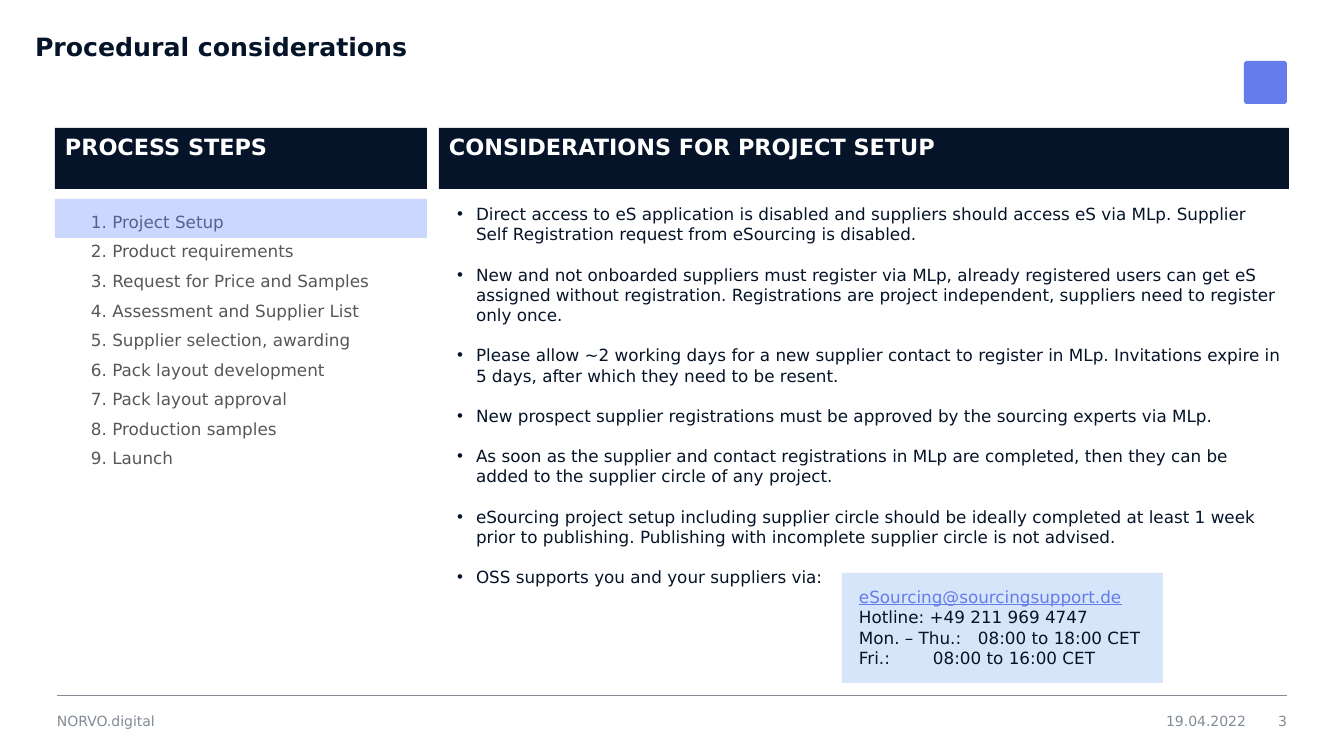
from lxml import etree
from pptx import Presentation
from pptx.dml.color import RGBColor
from pptx.enum.shapes import MSO_CONNECTOR, MSO_SHAPE
from pptx.enum.text import MSO_ANCHOR, MSO_AUTO_SIZE, PP_ALIGN
from pptx.oxml.ns import qn
from pptx.util import Emu, Pt

RECT = MSO_SHAPE.RECTANGLE
ROUND = MSO_SHAPE.ROUNDED_RECTANGLE
LINE = MSO_CONNECTOR.STRAIGHT
TOP = MSO_ANCHOR.TOP
FIXED = MSO_AUTO_SIZE.NONE
LEFT, RIGHT = PP_ALIGN.LEFT, PP_ALIGN.RIGHT

NAVY, BLUE, GREY = "051428", "647DEB", "838B95"
SCALE = 914400 / 100.8

STEPS = [
    "Project Setup",
    "Product requirements",
    "Request for Price and Samples",
    "Assessment and Supplier List",
    "Supplier selection, awarding",
    "Pack layout development",
    "Pack layout approval",
    "Production samples",
    "Launch",
]
POINTS = [
    "Direct access to eS application is disabled and suppliers should access eS via MLp. Supplier Self Registration request from eSourcing is disabled.",
    "New and not onboarded suppliers must register via MLp, already registered users can get eS assigned without registration. Registrations are project independent, suppliers need to register only once.",
    "Please allow ~2 working days for a new supplier contact to register in MLp. Invitations expire in 5 days, after which they need to be resent.",
    "New prospect supplier registrations must be approved by the sourcing experts via MLp.",
    "As soon as the supplier and contact registrations in MLp are completed, then they can be added to the supplier circle of any project.",
    "eSourcing project setup including supplier circle should be ideally completed at least 1 week prior to publishing. Publishing with incomplete supplier circle is not advised.",
    "OSS supports you and your suppliers via:",
]
CONTACTS = [
    ("eSourcing@sourcingsupport.de", 0),
    ("Hotline: +49 211 969 4747", 0),
    ("Mon. – Thu.:\t08:00 to 18:00 CET", 119),
    ("Fri.:\t08:00 to 16:00 CET", 74),
]


def px(num):
    return Emu(round(num * SCALE))


def tint(code):
    return RGBColor.from_string(code)


def apply(item, values):
    for name, value in values.items():
        setattr(item, name, value)


class Page:
    font = "DejaVu Sans"

    def __init__(self, slide):
        self.slide = slide

    def fill_text(self, frame, lines, size=12, color=NAVY, bold=False, pad=(0, 0), **form):
        across, down = pad
        apply(frame, {"margin_left": px(across), "margin_right": px(across),
                      "margin_top": px(down), "margin_bottom": px(down)})
        look = {"alignment": LEFT, "space_before": Pt(0), "space_after": Pt(0)}
        look.update(form)
        for i, line in enumerate(lines):
            para = frame.add_paragraph() if i else frame.paragraphs[0]
            apply(para, look)
            run = para.add_run()
            run.text = line
            apply(run.font, {"name": self.font, "size": Pt(size), "bold": bold})
            run.font.color.rgb = tint(color)

    def setup(self, frame):
        apply(frame, {"word_wrap": True, "auto_size": FIXED, "vertical_anchor": TOP})
        return frame

    def holder(self, idx, box, lines, **form):
        shape = self.slide.placeholders[idx]
        apply(shape, dict(zip(("left", "top", "width", "height"), map(px, box))))
        self.fill_text(self.setup(shape.text_frame), lines, **form)
        return shape.text_frame

    def label(self, box, text, **form):
        shape = self.slide.shapes.add_textbox(*map(px, box))
        self.fill_text(self.setup(shape.text_frame), [text], **form)

    def block(self, box, fill, lines=(), kind=RECT, alpha=100, **form):
        shape = self.slide.shapes.add_shape(kind, *map(px, box))
        shape.shadow.inherit = False
        shape.fill.solid()
        shape.fill.fore_color.rgb = tint(fill)
        shape.line.fill.background()
        if alpha < 100:
            color = shape._element.spPr.find(".//" + qn("a:srgbClr"))
            etree.SubElement(color, qn("a:alpha"), val=str(alpha * 1000))
        if lines:
            self.fill_text(self.setup(shape.text_frame), lines, **form)
        return shape

    def rule(self, left, right, y, color):
        line = self.slide.shapes.add_connector(LINE, px(left), px(y), px(right), px(y))
        line.line.color.rgb = tint(color)
        line.line.width = Pt(0.5)
        etree.SubElement(line._element.spPr, qn("a:effectLst"))

    def table(self, box, lines, **form):
        grid = self.slide.shapes.add_table(1, 1, *map(px, box)).table
        apply(grid, {"first_row": False, "horz_banding": False})
        cell = grid.cell(0, 0)
        cell.fill.background()
        self.fill_text(cell.text_frame, lines, **form)
        apply(cell, {"margin_left": px(32), "margin_right": px(32),
                     "margin_top": px(5), "margin_bottom": px(5)})


def main():
    deck = Presentation()
    apply(deck, {"slide_width": px(1344), "slide_height": px(756)})
    page = Page(deck.slides.add_slide(deck.slide_layouts[1]))

    page.holder(0, (35, 35, 1254, 27), ["Procedural considerations"],
                size=18, bold=True, line_spacing=0.9)
    body = page.holder(1, (447, 199, 845, 499), POINTS, pad=(10, 5),
                       line_spacing=Pt(14.4), space_after=Pt(14.4))
    for para in body.paragraphs:
        props = para._p.get_or_add_pPr()
        props.set("marL", str(px(19)))
        props.set("indent", str(px(-19)))

    page.rule(57, 1287, 695, GREY)
    page.block((1244, 61, 43, 43), BLUE, kind=ROUND).adjustments[0] = 0.07
    for left, width, text, side in (
        (57, 200, "NORVO.digital", LEFT),
        (1146, 100, "19.04.2022", RIGHT),
        (1260, 27, "3", RIGHT),
    ):
        page.label((left, 713, width, 17), text, size=10, color=GREY, alignment=side)

    page.table((59, 198, 372, 403), [f"{i}. {step}" for i, step in enumerate(STEPS, 1)],
               color="565856", line_spacing=1.5)
    page.block((55, 199, 372, 39), "537CFF", alpha=30)
    for left, width, text in (
        (439, 850, "CONSIDERATIONS FOR PROJECT SETUP"),
        (55, 372, "PROCESS STEPS"),
    ):
        page.block((left, 128, width, 61), NAVY, [text],
                   size=16, color="FFFFFF", bold=True, pad=(10, 5))

    card = page.block((842, 573, 321, 110), "D6E5FA", [text for text, _ in CONTACTS],
                      pad=(17, 14), line_spacing=Pt(14.4))
    paras = card.text_frame.paragraphs
    mail = paras[0].runs[0].font
    mail.underline = True
    mail.color.rgb = tint(BLUE)
    for para, (_, stop) in zip(paras, CONTACTS):
        if stop:
            tabs = etree.SubElement(para._p.get_or_add_pPr(), qn("a:tabLst"))
            etree.SubElement(tabs, qn("a:tab"), pos=str(px(stop)), algn="l")

    deck.save("out.pptx")


if __name__ == "__main__":
    main()
